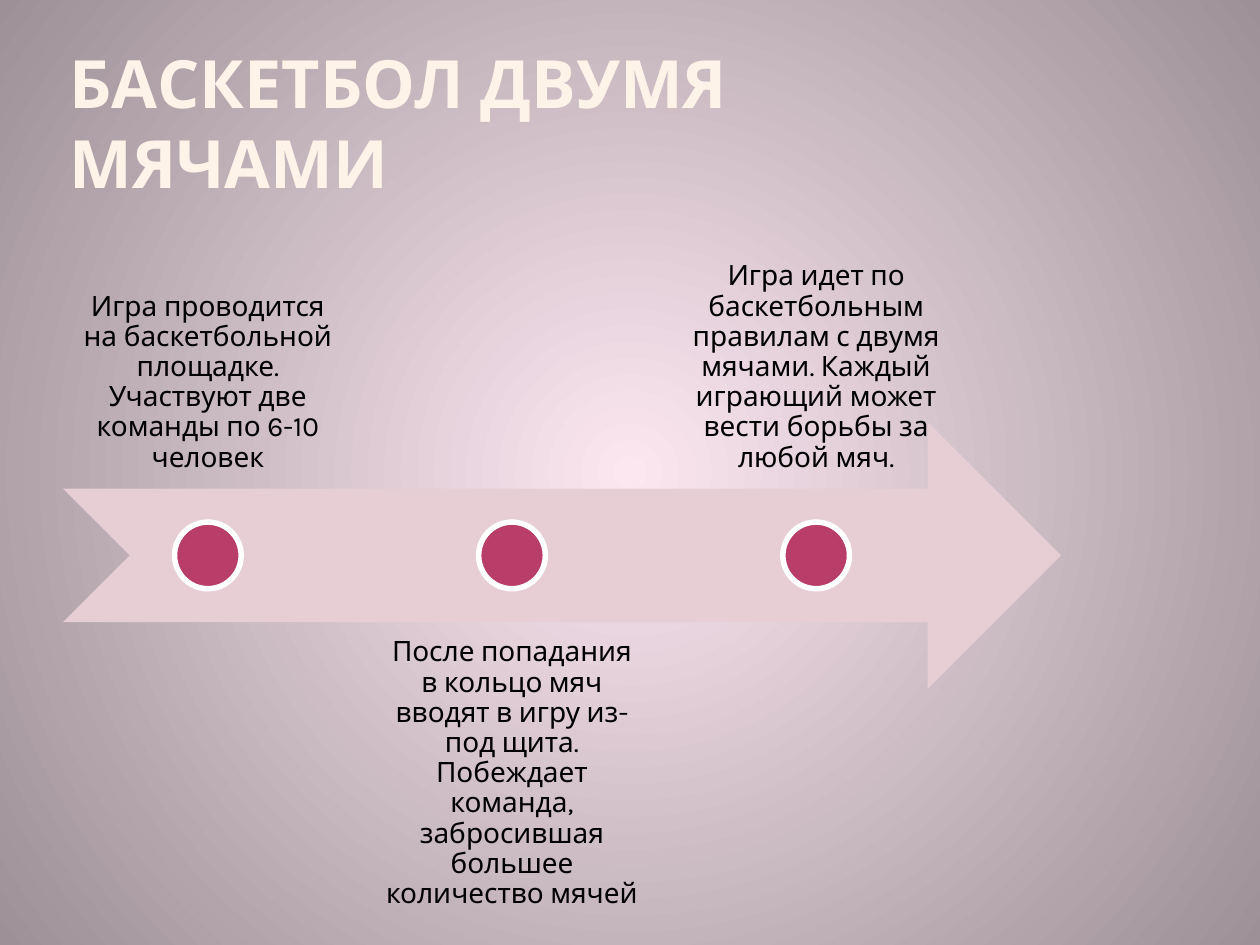
from lxml import etree
from pptx import Presentation
from pptx.dml.color import RGBColor
from pptx.enum.shapes import MSO_SHAPE
from pptx.enum.text import MSO_ANCHOR, MSO_AUTO_SIZE, PP_ALIGN
from pptx.oxml.ns import qn
from pptx.util import Pt

TOP, BOTTOM = MSO_ANCHOR.TOP, MSO_ANCHOR.BOTTOM
LEFT, CENTER = PP_ALIGN.LEFT, PP_ALIGN.CENTER
NO_AUTOFIT = MSO_AUTO_SIZE.NONE
ARROW, CIRCLE = MSO_SHAPE.NOTCHED_RIGHT_ARROW, MSO_SHAPE.OVAL

GLOW = RGBColor(0xFC, 0xE7, 0xF1)
EDGE = RGBColor(0x9D, 0x90, 0x96)
CREAM = RGBColor(0xFE, 0xF3, 0xE8)
PINK = RGBColor(0xE6, 0xCE, 0xD4)
CRIMSON = RGBColor(0xB8, 0x3D, 0x68)
WHITE = RGBColor(0xFF, 0xFF, 0xFF)
BLACK = RGBColor(0, 0, 0)


def write_text(shape, text, frame_format, para_format, font_format):
    frame = shape.text_frame
    para = frame.paragraphs[0]
    span = para.add_run()
    span.text = text
    for target, values in ((frame, frame_format), (para, para_format), (span.font, font_format)):
        for name, value in values.items():
            setattr(target, name, value)
    span.font.color.rgb = CREAM if font_format["bold"] else BLACK


def add_filled(kind, left, top, width, height, color):
    shape = page.shapes.add_shape(kind, Pt(left), Pt(top), Pt(width), Pt(height))
    shape.shadow.inherit = False
    shape.fill.solid()
    shape.fill.fore_color.rgb = color
    shape.line.fill.background()
    return shape


deck = Presentation()
deck.slide_width, deck.slide_height = Pt(720), Pt(540)
page = deck.slides.add_slide(deck.slide_layouts[5])

# Background: glow from the centre
fill = page.background.fill
fill.gradient()
for stop, color in zip(fill.gradient_stops, (GLOW, EDGE)):
    stop.color.rgb = color
gradient = page.element.find(".//" + qn("a:gradFill"))
gradient.remove(gradient.find(qn("a:lin")))
circle = etree.SubElement(gradient, qn("a:path"), {"path": "circle"})
etree.SubElement(circle, qn("a:fillToRect"), dict.fromkeys("ltrb", "50000"))

# Title
title = page.shapes.title
title.left, title.top, title.width, title.height = Pt(36), Pt(25.2), Pt(570.24), Pt(90)
write_text(
    title,
    "БАСКЕТБОЛ ДВУМЯ МЯЧАМИ",
    {"vertical_anchor": BOTTOM, "auto_size": NO_AUTOFIT, "word_wrap": True,
     "margin_left": Pt(3.6), "margin_right": Pt(3.6), "margin_top": 0, "margin_bottom": 0},
    {"alignment": LEFT},
    {"name": "Karla", "size": Pt(38), "bold": True},
)

# Timeline arrow
BAND = 152.4
ARROW_TOP = 241.2
add_filled(ARROW, 36, ARROW_TOP, 570.24, BAND, PINK)

# Steps: captions alternate above and below the arrow, each with a dot
STEP, CAPTION_WIDTH, DOT = 173.8, 165.6, 38.1
ABOVE, BELOW = 126.9, 355.5
steps = [
    ("Игра проводится на баскетбольной площадке. Участвуют две команды по 6-10 человек",
     ABOVE, BOTTOM),
    ("После попадания в кольцо мяч вводят в игру из-под щита. Побеждает команда, "
     "забросившая большее количество мячей", BELOW, TOP),
    ("Игра идет по баскетбольным правилам с двумя мячами. Каждый играющий может "
     "вести борьбы за любой мяч.", ABOVE, BOTTOM),
]
margins = {f"margin_{side}": Pt(8.9) for side in ("left", "right", "top", "bottom")}
for index, (text, top, anchor) in enumerate(steps):
    left = 36 + index * STEP
    box = page.shapes.add_textbox(Pt(left), Pt(top), Pt(CAPTION_WIDTH), Pt(BAND))
    write_text(
        box,
        text,
        {"vertical_anchor": anchor, "word_wrap": True, **margins},
        {"alignment": CENTER, "line_spacing": 0.9},
        {"name": "Karla", "size": Pt(16), "bold": False},
    )
    dot = add_filled(CIRCLE, left + (CAPTION_WIDTH - DOT) / 2,
                     ARROW_TOP + (BAND - DOT) / 2, DOT, DOT, CRIMSON)
    dot.line.color.rgb = WHITE
    dot.line.width = Pt(3.15)

deck.save("out.pptx")
